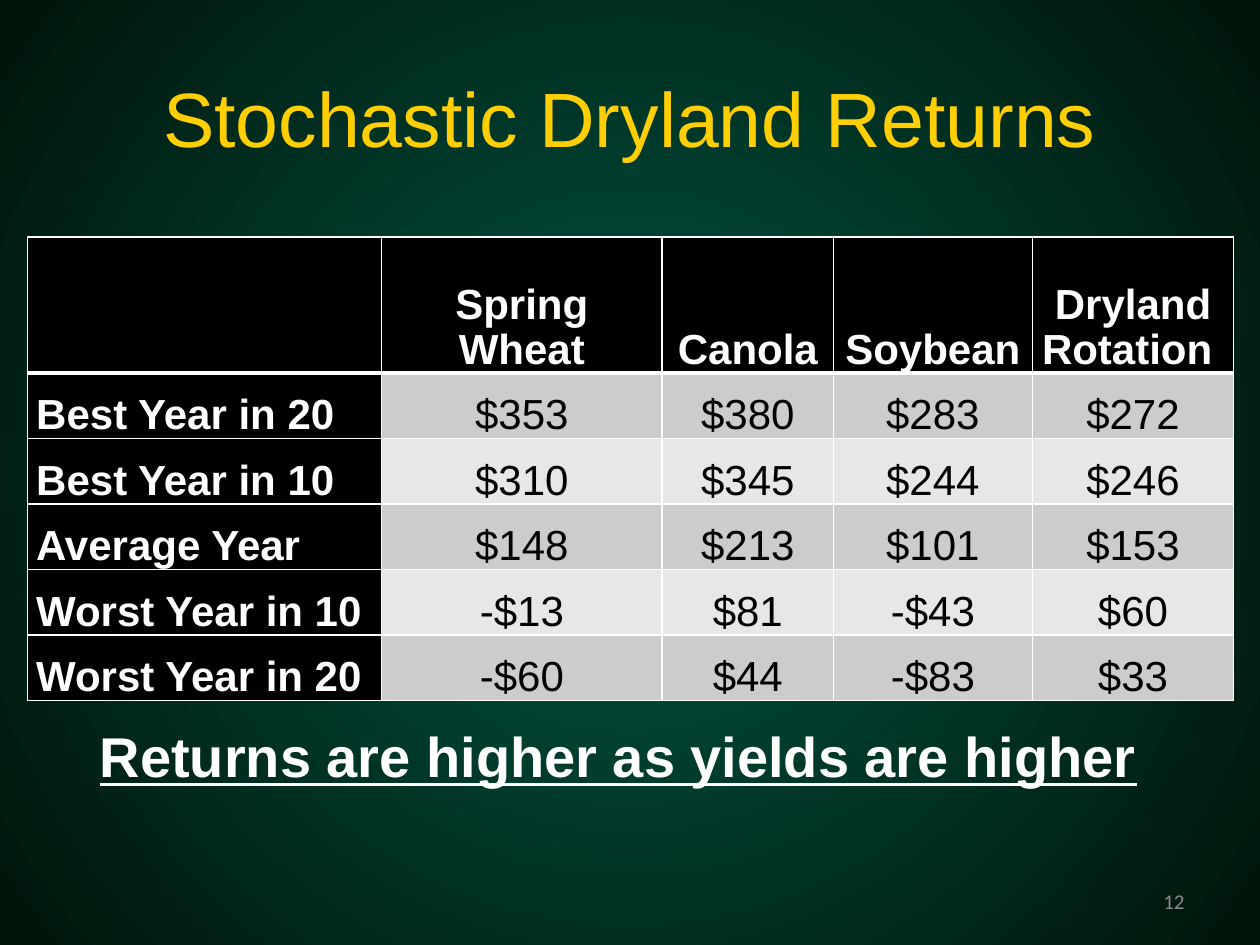
from dataclasses import dataclass

from lxml.etree import SubElement
from pptx import Presentation
from pptx.dml.color import RGBColor
from pptx.enum.text import MSO_ANCHOR, MSO_AUTO_SIZE, PP_ALIGN
from pptx.oxml.ns import qn
from pptx.util import Cm, Pt


@dataclass(frozen=True)
class Theme:
    font: str = "Arial"
    number_font: str = "Calibri"
    glow: str = "005643"
    edge: str = "001409"
    gold: str = "FFCF01"
    white: str = "FFFFFF"
    black: str = "000000"
    grey: str = "898989"
    bands: tuple = ("CCCCCC", "E7E7E7")
    title_size: int = 44
    table_size: int = 24
    note_size: int = 32
    number_size: int = 12


THEME = Theme()
COL_WIDTHS = [7.14, 5.66, 3.45, 4.01, 4.06]
HEAD_HEIGHT, ROW_HEIGHT = 2.74, 1.32
ROWS = [
    ["", "Spring Wheat", "Canola", "Soybean", "Dryland\nRotation\u00a0"],
    ["Best Year in 20", "$353", "$380", "$283", "$272"],
    ["Best Year in 10", "$310", "$345", "$244", "$246"],
    ["Average Year", "$148", "$213", "$101", "$153"],
    ["Worst Year in 10", "-$13", "$81", "-$43", "$60"],
    ["Worst Year in 20", "-$60", "$44", "-$83", "$33"],
]


def write(tf, text, size, color, font=THEME.font, bold=False, underline=False,
          align=PP_ALIGN.CENTER, spacing=None):
    for i, line in enumerate(text.split("\n")):
        p = tf.add_paragraph() if i else tf.paragraphs[0]
        p.alignment = align
        p.line_spacing = spacing
        r = p.add_run()
        r.text = line
        r.font.name, r.font.size = font, Pt(size)
        r.font.bold, r.font.underline = bold, underline
        r.font.color.rgb = RGBColor.from_string(color)


def paint_background(s):
    fill = s.background.fill
    fill.gradient()
    for stop, color in zip(fill.gradient_stops, (THEME.glow, THEME.edge)):
        stop.color.rgb = RGBColor.from_string(color)
    grad = s.element.find(".//" + qn("a:gradFill"))
    grad.remove(grad.find(qn("a:lin")))
    circle = SubElement(grad, qn("a:path"), {"path": "circle"})
    SubElement(circle, qn("a:fillToRect"), dict.fromkeys("ltrb", "50000"))


def set_borders(cell, bottom):
    tcPr = cell._tc.get_or_add_tcPr()
    widths = {"a:lnL": 1, "a:lnR": 1, "a:lnT": 1, "a:lnB": bottom}
    for i, (tag, width) in enumerate(widths.items()):
        ln = SubElement(tcPr, qn(tag), {"w": str(Pt(width))})
        SubElement(SubElement(ln, qn("a:solidFill")), qn("a:srgbClr"), {"val": THEME.white})
        tcPr.insert(i, ln)


def add_title(s, box, text):
    sp = s.shapes.title
    sp.left, sp.top, sp.width, sp.height = map(Cm, box)
    tf = sp.text_frame
    tf.vertical_anchor = MSO_ANCHOR.MIDDLE
    write(tf, text, THEME.title_size, THEME.gold)


def add_returns_table(s, left, top):
    height = HEAD_HEIGHT + ROW_HEIGHT * (len(ROWS) - 1)
    table = s.shapes.add_table(len(ROWS), len(COL_WIDTHS), Cm(left), Cm(top),
                               Cm(sum(COL_WIDTHS)), Cm(height)).table
    for col, width in zip(table.columns, COL_WIDTHS):
        col.width = Cm(width)
    for i, values in enumerate(ROWS):
        table.rows[i].height = Cm(ROW_HEIGHT if i else HEAD_HEIGHT)
        for j, text in enumerate(values):
            cell = table.cell(i, j)
            label = i == 0 or j == 0
            cell.fill.solid()
            cell.fill.fore_color.rgb = RGBColor.from_string(
                THEME.black if label else THEME.bands[(i - 1) % 2])
            cell.vertical_anchor = MSO_ANCHOR.BOTTOM
            cell.margin_left = cell.margin_right = Cm(0.18)
            cell.margin_top = cell.margin_bottom = 0
            set_borders(cell, bottom=1 if i else 3)
            if text:
                write(cell.text_frame, text, THEME.table_size,
                      THEME.white if label else THEME.black, bold=label,
                      align=PP_ALIGN.CENTER if i == 0 or j else PP_ALIGN.LEFT,
                      spacing=None if i else 0.95)


def add_text(s, box, text, anchor=MSO_ANCHOR.TOP, grow=False, **fmt):
    tf = s.shapes.add_textbox(*map(Cm, box)).text_frame
    tf.word_wrap = True
    tf.vertical_anchor = anchor
    if grow:
        tf.auto_size = MSO_AUTO_SIZE.SHAPE_TO_FIT_TEXT
    write(tf, text, **fmt)


def main():
    prs = Presentation()
    prs.slide_width, prs.slide_height = Cm(25.4), Cm(19.05)
    s = prs.slides.add_slide(prs.slide_layouts[5])
    paint_background(s)
    add_title(s, (1.27, 0.76, 22.86, 3.18), "Stochastic Dryland Returns")
    add_returns_table(s, 0.55, 4.78)
    add_text(s, (18.2, 17.66, 5.93, 1.01), "12", anchor=MSO_ANCHOR.MIDDLE,
             size=THEME.number_size, color=THEME.grey, font=THEME.number_font,
             align=PP_ALIGN.RIGHT)
    add_text(s, (1.27, 14.43, 22.4, 1.62), "Returns are higher as yields are higher",
             grow=True, size=THEME.note_size, color=THEME.white, bold=True, underline=True)
    prs.save("out.pptx")


if __name__ == "__main__":
    main()
